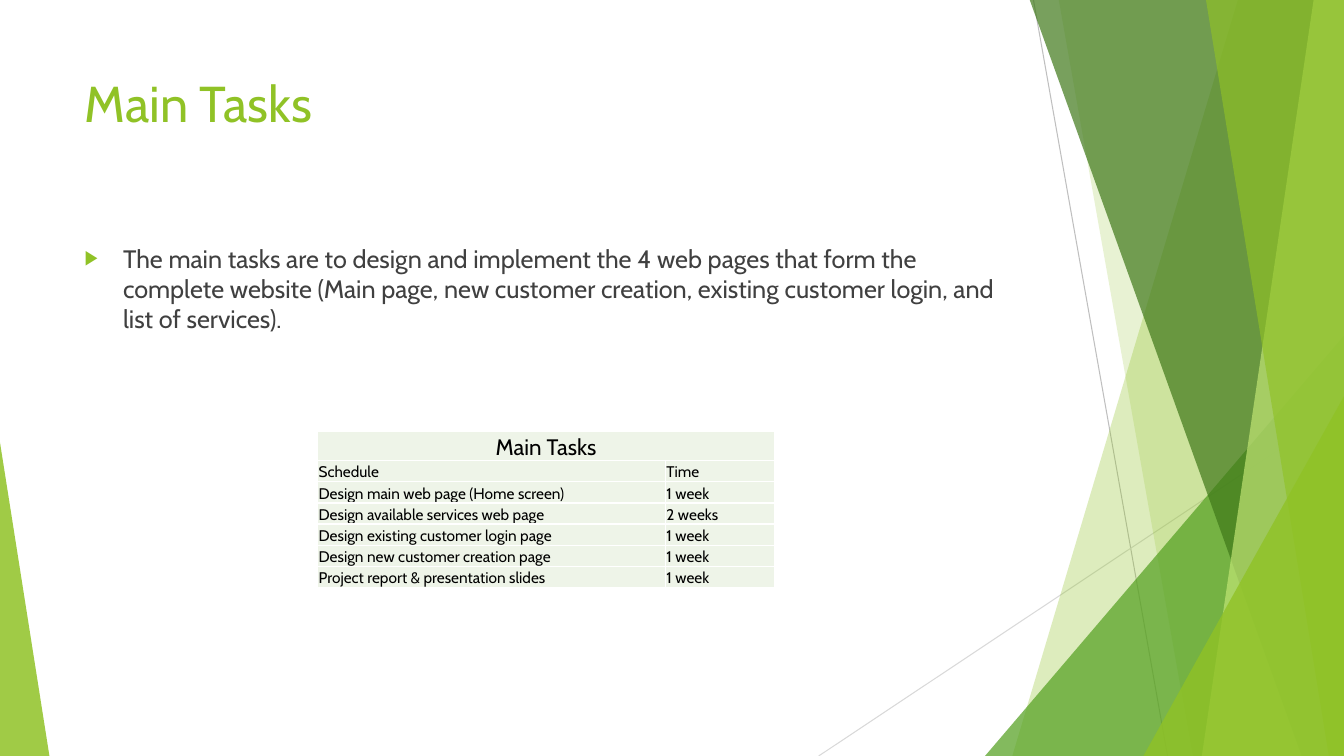
from lxml import etree
from pptx import Presentation
from pptx import util as u
from pptx.dml.color import RGBColor
from pptx.enum import shapes, text
from pptx.oxml import ns

PX = 9144
WIDTH, HEIGHT = 1333, 750
FONT = "Cabin"
COLORS = {
    "lime": "90C226", "green": "54A021", "forest": "3F7819", "pale": "C0E474",
    "body": "404040", "black": "000000", "white": "FFFFFF", "cell": "EEF4E8",
    "ray": "BFBFBF", "light_ray": "D9D9D9",
}
SCHEDULE = [
    ("Schedule", "Time"),
    ("Design main web page (Home screen)", "1 week"),
    ("Design available services web page", "2 weeks"),
    ("Design existing customer login page", "1 week"),
    ("Design new customer creation page", "1 week"),
    ("Project report & presentation slides", "1 week"),
]
INTRO = ("The main tasks are to design and implement the 4 web pages that form the "
         "complete website (Main page, new customer creation, existing customer login, "
         "and list of services).")


def px(*lengths):
    return [u.Emu(length * PX) for length in lengths]


def rgb(color):
    return RGBColor.from_string(COLORS[color])


def apply(target, values):
    for name, value in values.items():
        setattr(target, name, value)


def add_child(parent, tag, **attributes):
    return etree.SubElement(parent, ns.qn(tag), **attributes)


def add_ray(slide, start, end, color):
    ray = slide.shapes.add_connector(shapes.MSO_CONNECTOR.STRAIGHT, *px(*start, *end))
    ray.line.color.rgb = rgb(color)
    ray.line.width = u.Pt(0.75)
    add_child(ray._element.spPr, "a:effectLst")


def paint(facet, color, opacity):
    facet.shadow.inherit = False
    facet.fill.solid()
    facet.fill.fore_color.rgb = rgb(color)
    facet.line.fill.background()
    tint = facet._element.spPr.find(ns.qn("a:solidFill"))[0]
    add_child(tint, "a:alpha", val=str(opacity * 1000))


def add_band(slide, top_left, top_right, bottom_left, color, opacity):
    outline = slide.shapes.build_freeform(top_left, -1, scale=PX)
    outline.add_line_segments(
        [(top_right, -1), (WIDTH, HEIGHT), (bottom_left, HEIGHT)], close=True)
    paint(outline.convert_to_shape(), color, opacity)


def add_triangle(slide, left, top, width, apex, color, opacity):
    triangle = slide.shapes.add_shape(
        shapes.MSO_SHAPE.ISOSCELES_TRIANGLE, *px(left, top, width, HEIGHT - top))
    triangle.adjustments[0] = apex
    paint(triangle, color, opacity)


def add_facets(slide):
    add_ray(slide, (1025, 0), (1158, HEIGHT), "ray")
    add_ray(slide, (WIDTH, 403), (812, HEIGHT), "light_ray")
    add_band(slide, 1228, WIDTH, 1004, "lime", 30)
    add_band(slide, 1050, WIDTH, 1183, "lime", 20)
    add_triangle(slide, 977, 333, 356, 1, "green", 72)
    add_band(slide, 1021, WIDTH, 1291, "forest", 70)
    add_band(slide, 1303, WIDTH, 1192, "pale", 70)
    add_band(slide, 1196, WIDTH, 1318, "lime", 65)
    add_triangle(slide, 1134, 393, 199, 1, "lime", 80)
    add_triangle(slide, 0, 439, 49, 0, "lime", 85)


def write(frame, words, size, color, align=text.PP_ALIGN.LEFT):
    paragraph = frame.paragraphs[0]
    paragraph.alignment = align
    run = paragraph.add_run()
    run.text = words
    apply(run.font, {"name": FONT, "size": u.Pt(size), "bold": False})
    run.font.color.rgb = rgb(color)
    return paragraph


def fill_placeholder(slide, holder, box, words, size, color):
    slide.shapes._spTree.append(holder._element)
    apply(holder, dict(zip(("left", "top", "width", "height"), px(*box))))
    apply(holder.text_frame, {
        "word_wrap": True,
        "auto_size": text.MSO_AUTO_SIZE.NONE,
        "vertical_anchor": text.MSO_ANCHOR.TOP,
    })
    return write(holder.text_frame, words, size, color)


def add_bullet(paragraph):
    paragraph.space_before = u.Pt(10)
    properties = paragraph._p.get_or_add_pPr()
    properties.set("marL", str(38 * PX))
    properties.set("indent", str(-38 * PX))
    bullet_color = add_child(properties, "a:buClr")
    add_child(bullet_color, "a:srgbClr", val=COLORS["lime"])
    add_child(properties, "a:buSzPct", val="80000")
    add_child(properties, "a:buFont", typeface="Arial")
    add_child(properties, "a:buChar", char="▶")


def style_cell(cell):
    margin, none = px(1, 0)
    apply(cell, {
        "margin_left": margin, "margin_right": margin,
        "margin_top": margin, "margin_bottom": none,
        "vertical_anchor": text.MSO_ANCHOR.BOTTOM,
    })
    properties = cell._tc.get_or_add_tcPr()
    for side in ("a:lnL", "a:lnR", "a:lnT", "a:lnB"):
        border = add_child(properties, side, w=str(u.Pt(1)))
        add_child(add_child(border, "a:solidFill"), "a:srgbClr", val=COLORS["white"])
    cell.fill.solid()
    cell.fill.fore_color.rgb = rgb("cell")


def add_schedule(slide):
    widths = px(345, 108)
    heights = px(29, *[21] * len(SCHEDULE))
    schedule = slide.shapes.add_table(
        len(heights), len(widths), *px(315, 428), sum(widths), sum(heights)).table
    apply(schedule, {"first_row": False, "horz_banding": False})
    for column, width in zip(schedule.columns, widths):
        column.width = width
    for row, height in zip(schedule.rows, heights):
        row.height = height
    for cell in schedule.iter_cells():
        style_cell(cell)
    heading = schedule.cell(0, 0)
    heading.merge(schedule.cell(0, 1))
    write(heading.text_frame, "Main Tasks", 16, "black", text.PP_ALIGN.CENTER)
    for row, entry in enumerate(SCHEDULE, start=1):
        for column, words in enumerate(entry):
            write(schedule.cell(row, column).text_frame, words, 11, "black")


def main():
    deck = Presentation()
    deck.slide_width, deck.slide_height = px(WIDTH, HEIGHT)
    slide = deck.slides.add_slide(deck.slide_layouts[1])
    add_facets(slide)
    title, intro = slide.placeholders
    fill_placeholder(slide, title, (74, 67, 940, 144), "Main Tasks", 36, "lime")
    add_bullet(fill_placeholder(slide, intro, (74, 236, 940, 424), INTRO, 18, "body"))
    add_schedule(slide)
    deck.save("out.pptx")


if __name__ == "__main__":
    main()
